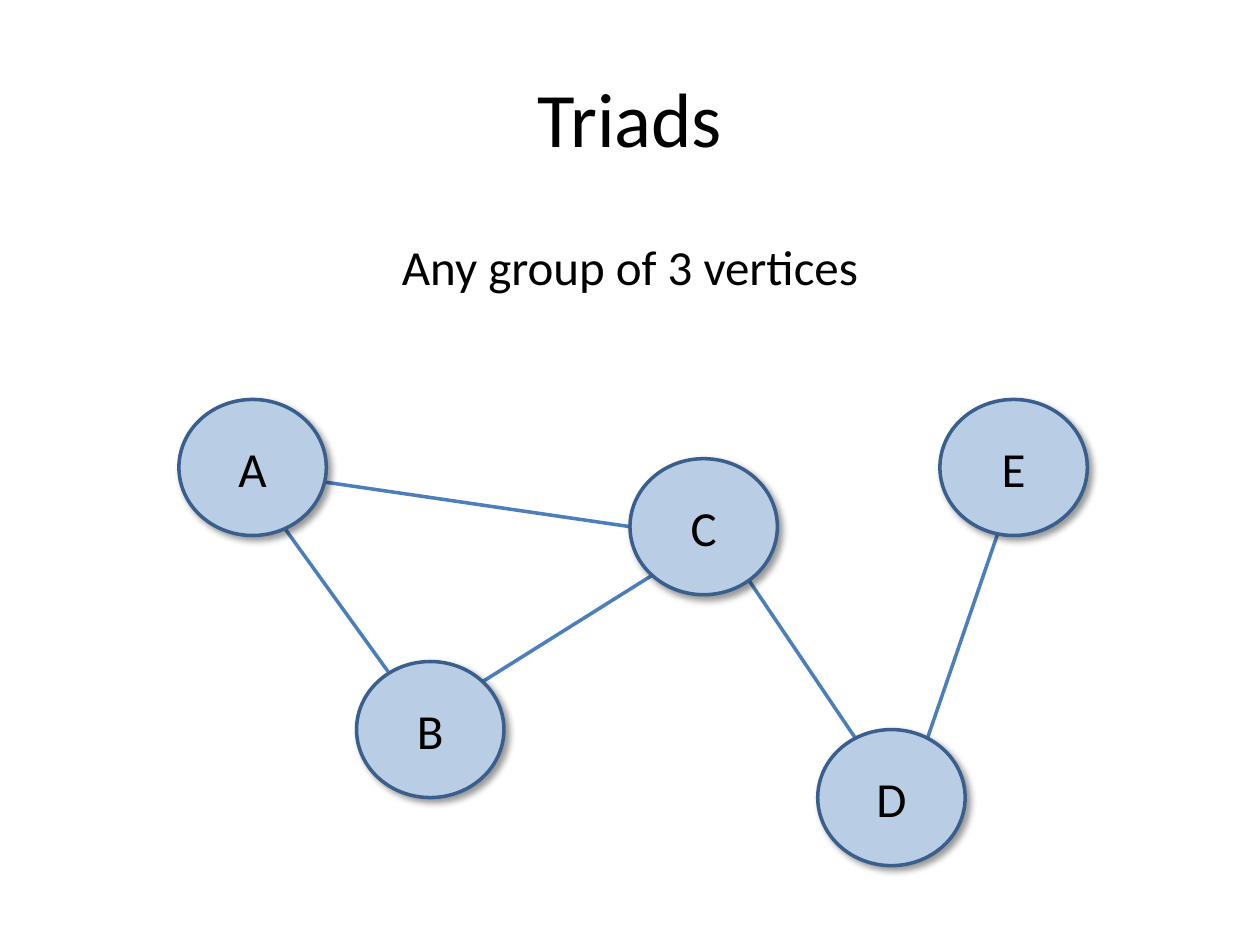
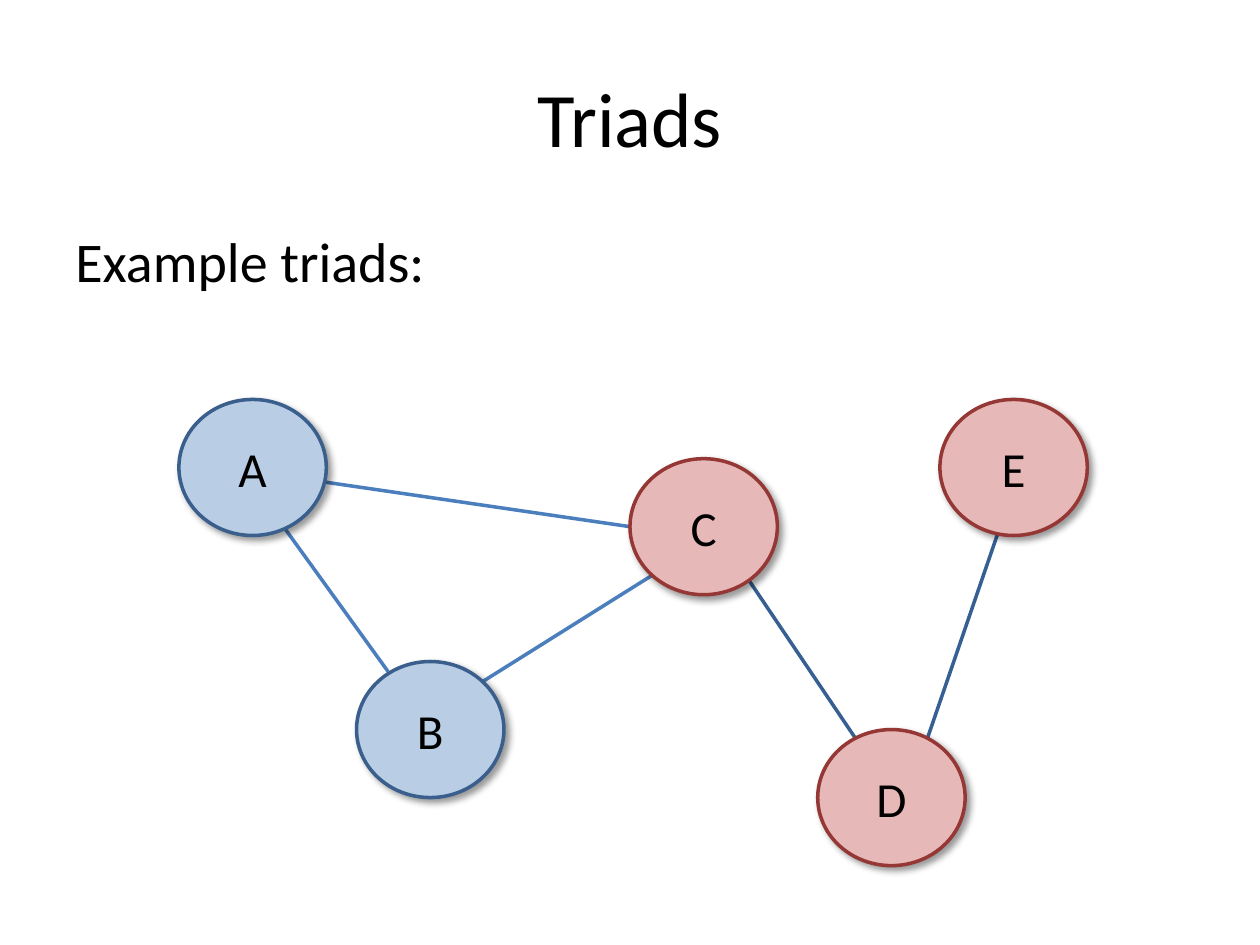
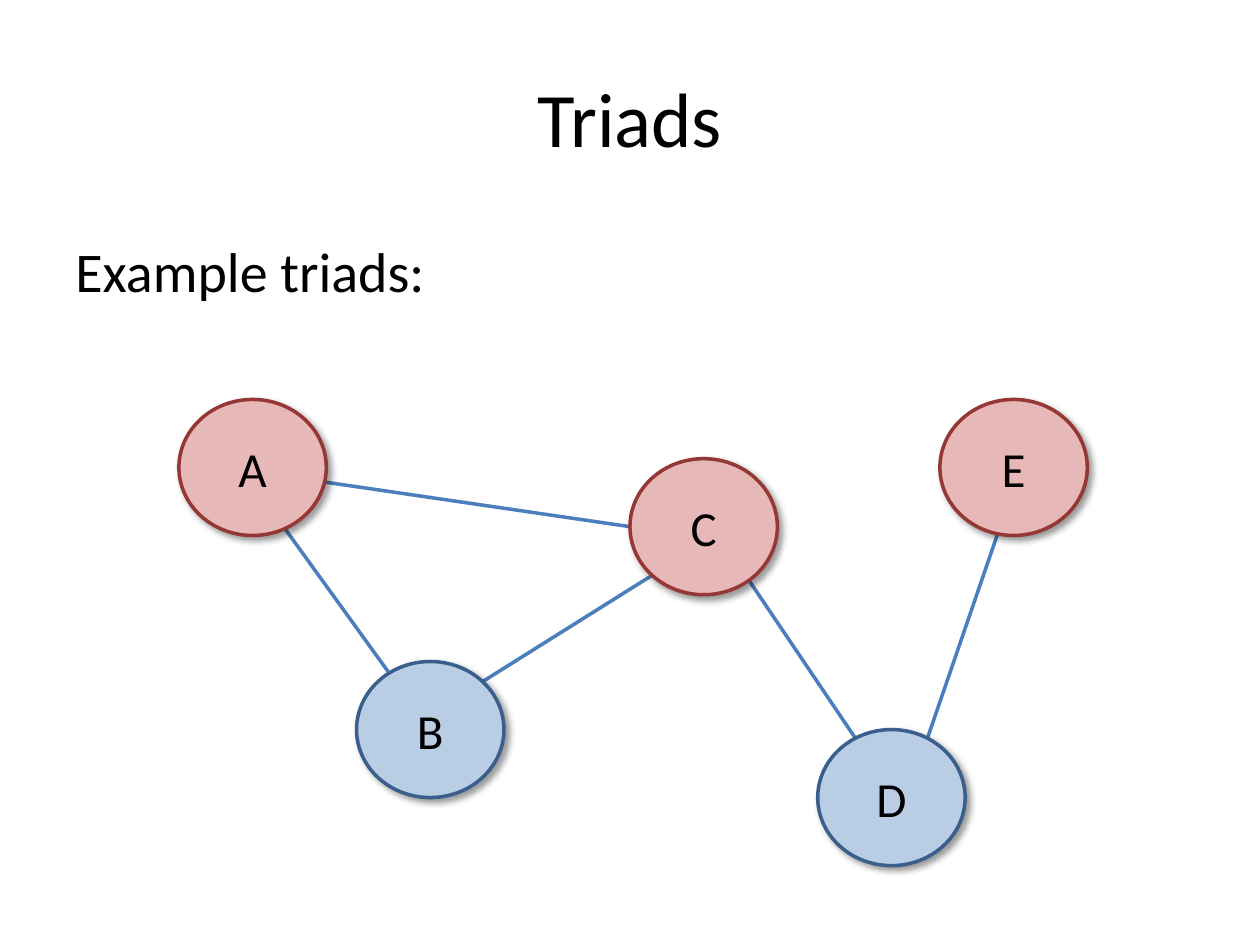
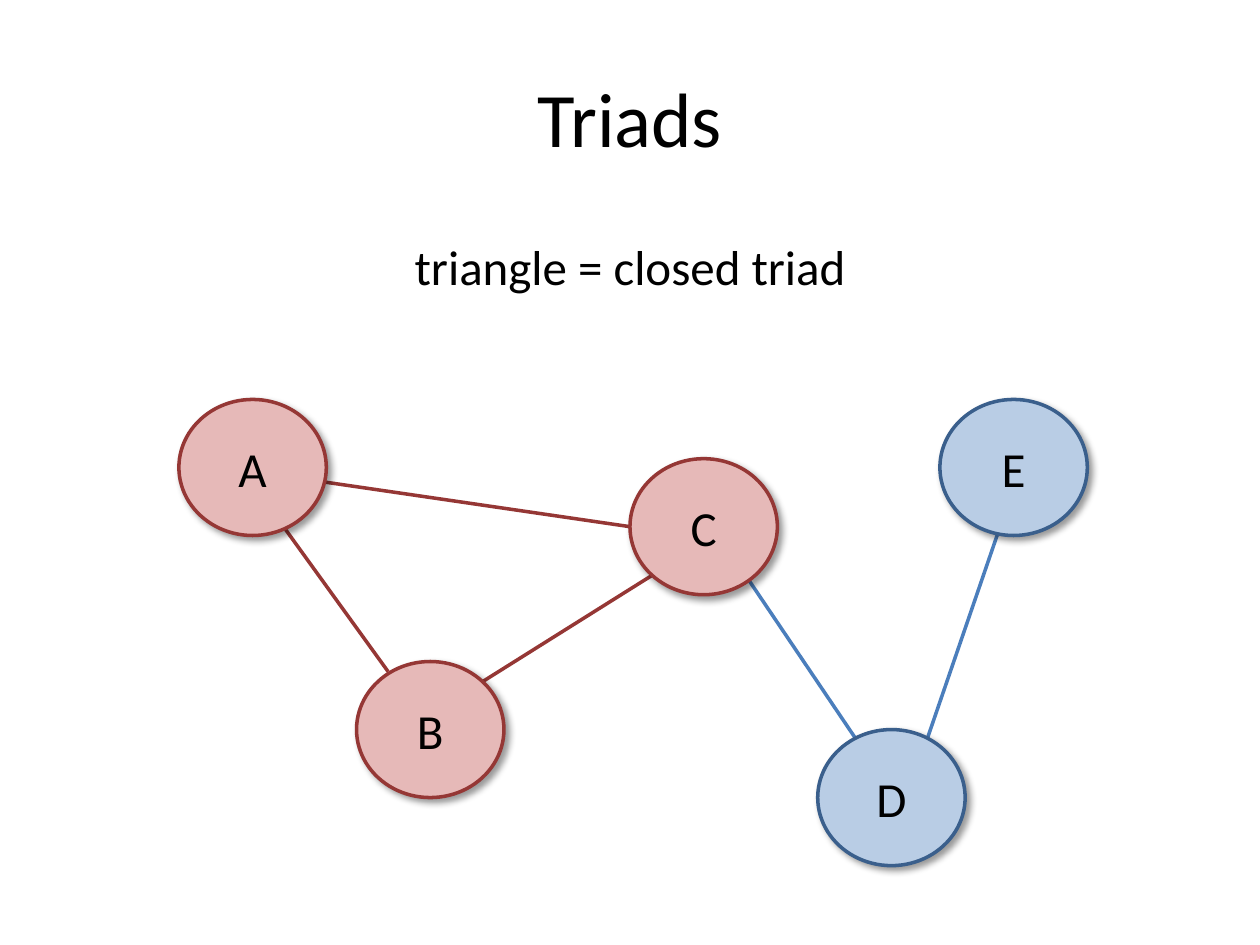
import dataclasses

import lxml.etree
import pptx
import pptx.dml.color
import pptx.enum.shapes
import pptx.enum.text
import pptx.oxml.ns
import pptx.util

Inches = pptx.util.Inches
Pt = pptx.util.Pt
Color = pptx.dml.color.RGBColor.from_string
Align = pptx.enum.text.PP_ALIGN


@dataclasses.dataclass(frozen=True)
class Theme:
    font: str = "Calibri"
    text: str = "000000"
    node_fill: str = "B9CDE5"
    node_line: str = "3A5F8C"
    marked_fill: str = "E6B9B8"
    marked_line: str = "953735"
    edge: str = "4B7EBC"
    dark_edge: str = "376092"
    title_size: int = 44
    example_size: int = 32
    text_size: int = 28
    line_width: int = 2


@dataclasses.dataclass(frozen=True)
class Box:
    left: float
    top: float
    width: float
    height: float

    def place(self, shape):
        shape.left, shape.top = Inches(self.left), Inches(self.top)
        shape.width, shape.height = Inches(self.width), Inches(self.height)


THEME = Theme()
TITLE_BOX = Box(0.5, 0.3, 9, 1.25)
CAPTION_BOX = Box(0.5, 1.83, 9, 0.58)
HIGH_CAPTION_BOX = Box(0.5, 1.75, 9, 0.87)
GRAPH_BOX = Box(1.42, 3.17, 7.21, 3.7)

# Node corners and edge ends are measured from the corner of the graph's box.
NODE_WIDTH, NODE_HEIGHT = 1.17, 1.08
NODES = {
    "B": (1.41, 2.08),
    "C": (3.58, 0.47),
    "E": (6.04, 0),
    "D": (5.07, 2.62),
    "A": (0, 0),
}
EDGES = {
    "AB": ((0.83, 1.01), (1.66, 2.16)),
    "AC": ((0.91, 0.62), (3.58, 1.01)),
    "CB": ((3.75, 1.4), (2.41, 2.24)),
    "CD": ((4.5, 1.4), (5.41, 2.75)),
    "DE": ((5.92, 2.75), (6.83, 0.1)),
}


def write(shape, text, size, align, anchor):
    frame = shape.text_frame
    frame.word_wrap = True
    frame.vertical_anchor = anchor
    para = frame.paragraphs[0]
    para.text = text
    para.alignment = align
    para.font.name = THEME.font
    para.font.size = Pt(size)
    para.font.color.rgb = Color(THEME.text)


def set_line(line, color):
    line.color.rgb = Color(color)
    line.width = Pt(THEME.line_width)


def add_child(parent, tag, **attributes):
    return lxml.etree.SubElement(parent, pptx.oxml.ns.qn(tag), attributes)


def add_soft_shadow(shape):
    shape.shadow.inherit = False
    effects = shape._element.spPr.find(pptx.oxml.ns.qn("a:effectLst"))
    shadow = add_child(effects, "a:outerShdw", blurRad=str(Pt(4)), dist=str(Pt(3)),
                       dir="2700000", algn="tl", rotWithShape="0")
    color = add_child(shadow, "a:srgbClr", val="000000")
    add_child(color, "a:alpha", val="40000")


def add_edge(page, box, ends, color):
    points = [Inches(length) for x, y in ends for length in (box.left + x, box.top + y)]
    edge = page.shapes.add_connector(pptx.enum.shapes.MSO_CONNECTOR.STRAIGHT, *points)
    set_line(edge.line, color)
    add_child(edge._element.spPr, "a:effectLst")


def add_node(page, box, name, marked):
    x, y = NODES[name]
    node = page.shapes.add_shape(
        pptx.enum.shapes.MSO_SHAPE.OVAL, Inches(box.left + x), Inches(box.top + y),
        Inches(NODE_WIDTH), Inches(NODE_HEIGHT))
    node.fill.solid()
    node.fill.fore_color.rgb = Color(THEME.marked_fill if marked else THEME.node_fill)
    set_line(node.line, THEME.marked_line if marked else THEME.node_line)
    add_soft_shadow(node)
    write(node, name, THEME.text_size, Align.CENTER, pptx.enum.text.MSO_ANCHOR.MIDDLE)


def add_graph(page, box, marked_nodes, edge_colors):
    """Draw the edges first, so that the nodes cover their ends."""
    for name, ends in EDGES.items():
        add_edge(page, box, ends, edge_colors.get(name, THEME.edge))
    for name in NODES:
        add_node(page, box, name, name in marked_nodes)


def add_caption(page, box, text, size, align):
    caption = page.shapes.add_textbox(0, 0, 0, 0)
    box.place(caption)
    write(caption, text, size, align, pptx.enum.text.MSO_ANCHOR.TOP)


def add_triad_page(deck, caption, size, align, caption_box=CAPTION_BOX,
                   marked_nodes="", edge_colors=None):
    page = deck.slides.add_slide(deck.slide_layouts.get_by_name("Title Only"))
    title = page.shapes.title
    TITLE_BOX.place(title)
    write(title, "Triads", THEME.title_size, Align.CENTER,
          pptx.enum.text.MSO_ANCHOR.MIDDLE)
    add_caption(page, caption_box, caption, size, align)
    add_graph(page, GRAPH_BOX, marked_nodes, edge_colors or {})


def main():
    deck = pptx.Presentation()
    deck.slide_width, deck.slide_height = Inches(10), Inches(7.5)
    statement = {"size": THEME.text_size, "align": Align.CENTER}
    example = {"caption": "Example triads:", "size": THEME.example_size,
               "align": Align.LEFT}

    add_triad_page(deck, "Any group of 3 vertices", **statement)
    add_triad_page(deck, **example, caption_box=HIGH_CAPTION_BOX, marked_nodes="CDE",
                   edge_colors=dict.fromkeys(("CD", "DE"), THEME.dark_edge))
    add_triad_page(deck, **example, marked_nodes="ACE")
    add_triad_page(deck, "triangle = closed triad", **statement, marked_nodes="ABC",
                   edge_colors=dict.fromkeys(("AB", "AC", "CB"), THEME.marked_line))
    deck.save("out.pptx")


if __name__ == "__main__":
    main()
